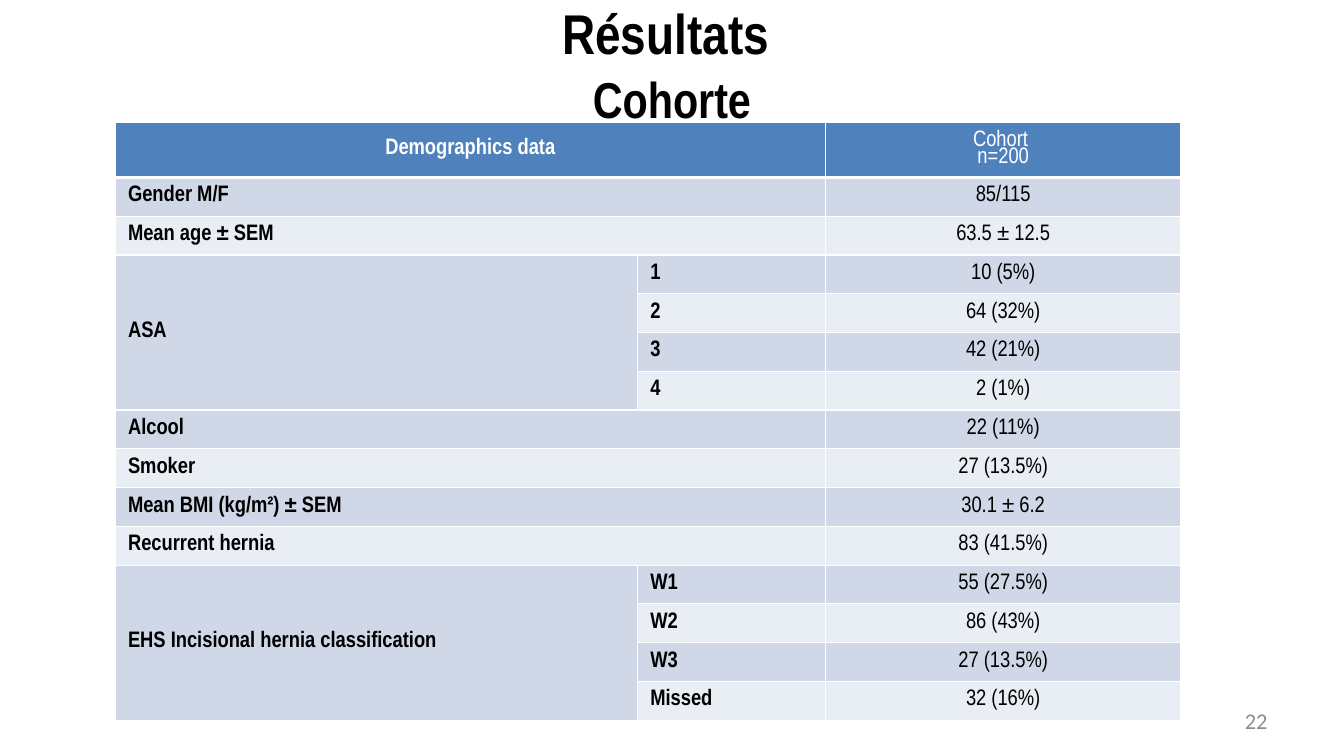
from lxml.etree import SubElement
from pptx import Presentation
from pptx.dml.color import RGBColor
from pptx.enum.text import MSO_ANCHOR, PP_ALIGN
from pptx.oxml.ns import qn
from pptx.util import Inches, Pt

BLACK = RGBColor(0x00, 0x00, 0x00)
WHITE = RGBColor(0xFF, 0xFF, 0xFF)
GREY = RGBColor(0x8C, 0x8C, 0x8C)
HEADER_BLUE = RGBColor(0x4F, 0x81, 0xBD)
BANDS = [RGBColor(0xE9, 0xED, 0xF4), RGBColor(0xD0, 0xD8, 0xE8)]
COLUMN_WIDTHS = [5.18, 1.87, 3.52]
HEADER_HEIGHT, ROW_HEIGHT = 0.55, 0.385
ROWS = [
    ("Demographics data", "", "Cohort \nn=200"),
    ("Gender M/F", "", "85/115"),
    ("Mean age ± SEM", "", "63.5 ± 12.5"),
    ("ASA", "1", "10 (5%)"),
    ("", "2", "64 (32%)"),
    ("", "3", "42 (21%)"),
    ("", "4", "2 (1%)"),
    ("Alcool", "", "22 (11%)"),
    ("Smoker", "", "27 (13.5%)"),
    ("Mean BMI (kg/m²) ± SEM", "", "30.1 ± 6.2"),
    ("Recurrent hernia", "", "83 (41.5%)"),
    ("EHS Incisional hernia classification", "W1", "55 (27.5%)"),
    ("", "W2", "86 (43%)"),
    ("", "W3", "27 (13.5%)"),
    ("", "Missed", "32 (16%)"),
]
GROUP_SIZE = 4


def format_text(para, size, color, bold, align, font="Arial Narrow"):
    para.alignment = align
    for span in para.runs:
        span.font.name = font
        span.font.size = Pt(size)
        span.font.bold = bold
        span.font.color.rgb = color


def add_borders(cell, bottom_width):
    properties = cell._tc.get_or_add_tcPr()
    for side, width in (("L", 1), ("R", 1), ("T", 1), ("B", bottom_width)):
        line = SubElement(properties, qn(f"a:ln{side}"), w=str(Pt(width)))
        fill = SubElement(line, qn("a:solidFill"))
        SubElement(fill, qn("a:srgbClr"), val=str(WHITE))


deck = Presentation()
deck.slide_width, deck.slide_height = Inches(13.33), Inches(7.5)
page = deck.slides.add_slide(deck.slide_layouts[5])

title = page.shapes.title
title.left, title.top = 0, Inches(-0.06)
title.width, title.height = deck.slide_width, Inches(1.38)
title.text_frame.text = "Résultats \nCohorte"
title.text_frame.vertical_anchor = MSO_ANCHOR.MIDDLE
for para, size in zip(title.text_frame.paragraphs, (40, 36)):
    format_text(para, size, BLACK, True, PP_ALIGN.CENTER)
title.text_frame.paragraphs[1].space_before = Pt(2)

table_height = HEADER_HEIGHT + ROW_HEIGHT * (len(ROWS) - 1)
table = page.shapes.add_table(
    len(ROWS), len(COLUMN_WIDTHS), Inches(1.14), Inches(1.21),
    Inches(sum(COLUMN_WIDTHS)), Inches(table_height)).table
for column, width in zip(table.columns, COLUMN_WIDTHS):
    column.width = Inches(width)

for row_index, texts in enumerate(ROWS):
    is_header = row_index == 0
    table.rows[row_index].height = Inches(HEADER_HEIGHT if is_header else ROW_HEIGHT)
    for column_index, text in enumerate(texts):
        cell = table.cell(row_index, column_index)
        add_borders(cell, 3 if is_header else 1)
        cell.fill.solid()
        cell.fill.fore_color.rgb = HEADER_BLUE if is_header else BANDS[row_index % 2]
        cell.margin_left = cell.margin_right = Inches(0.13)
        cell.margin_top = cell.margin_bottom = Inches(0.07)
        cell.vertical_anchor = MSO_ANCHOR.MIDDLE
        cell.text_frame.text = text
        is_value = column_index == 2
        align = PP_ALIGN.CENTER if is_header or is_value else PP_ALIGN.LEFT
        for para in cell.text_frame.paragraphs:
            para.line_spacing = 0.8
            format_text(para, 16, WHITE if is_header else BLACK, not is_value, align)
            para.font.size = Pt(16)
    label, level, _ = texts
    if label and level:
        table.cell(row_index, 0).merge(table.cell(row_index + GROUP_SIZE - 1, 0))
    elif label:
        table.cell(row_index, 0).merge(table.cell(row_index, 1))

number_box = page.shapes.add_textbox(Inches(9.56), Inches(6.95), Inches(3.11), Inches(0.4))
number_box.text_frame.word_wrap = True
number_box.text_frame.vertical_anchor = MSO_ANCHOR.MIDDLE
number_box.text_frame.text = "22"
format_text(number_box.text_frame.paragraphs[0], 16, GREY, False, PP_ALIGN.RIGHT, "Calibri")

deck.save("out.pptx")
